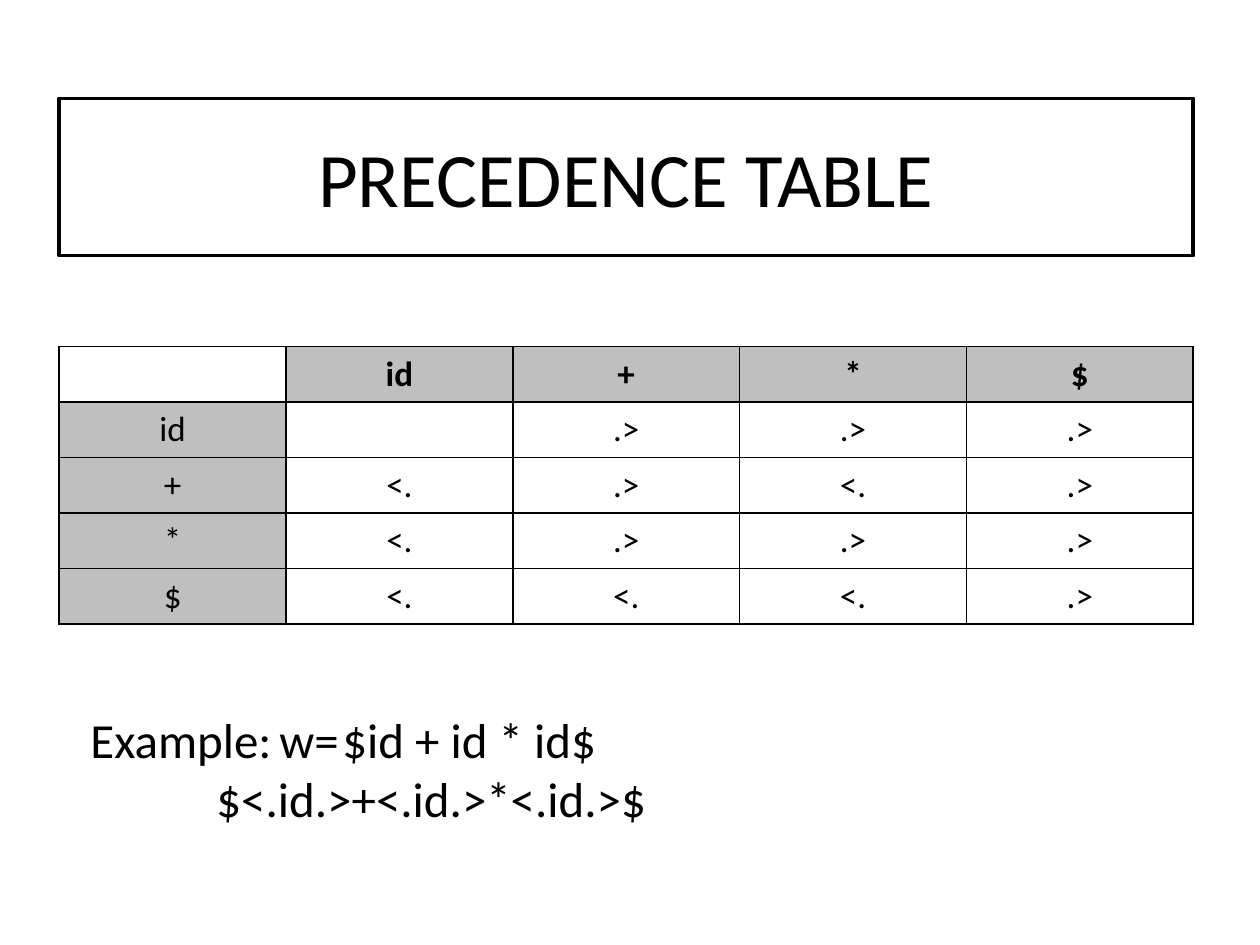
import pptx
import pptx.dml.color
import pptx.enum.text
import pptx.oxml
import pptx.oxml.ns
import pptx.util
from dataclasses import dataclass

Inches, Pt = pptx.util.Inches, pptx.util.Pt
MIDDLE = pptx.enum.text.MSO_ANCHOR.MIDDLE
CENTER = pptx.enum.text.PP_ALIGN.CENTER


@dataclass(frozen=True)
class Theme:
    font: str = "Calibri"
    ink: str = "000000"
    paper: str = "FFFFFF"
    header: str = "BFBFBF"
    title_size: int = 44
    table_size: int = 20
    example_size: int = 28
    frame_width: int = 2
    border_width: int = 1


THEME = Theme()

SYMBOLS = ["id", "+", "*", "$"]
RELATIONS = [
    ["", ".>", ".>", ".>"],
    ["<.", ".>", "<.", ".>"],
    ["<.", ".>", ".>", ".>"],
    ["<.", "<.", "<.", ".>"],
]
EXAMPLE = ["Example:\tw=\t$id + id * id$", "\t\t$<.id.>+<.id.>*<.id.>$"]


def rgb(value):
    return pptx.dml.color.RGBColor.from_string(value)


def fill_solid(target, color):
    target.fill.solid()
    target.fill.fore_color.rgb = rgb(color)


def write(para, text, size, bold=False, align=None):
    para.alignment = align
    span = para.add_run()
    span.text = text
    formats = {"name": THEME.font, "size": Pt(size), "bold": bold}
    for name, value in formats.items():
        setattr(span.font, name, value)
    span.font.color.rgb = rgb(THEME.ink)


def add_borders(cell):
    props = cell._tc.get_or_add_tcPr()
    for index, side in enumerate(("lnL", "lnR", "lnT", "lnB")):
        line = pptx.oxml.parse_xml(
            f'<a:{side} {pptx.oxml.ns.nsdecls("a")} w="{Pt(THEME.border_width)}">'
            f'<a:solidFill><a:srgbClr val="{THEME.ink}"/></a:solidFill></a:{side}>')
        props.insert(index, line)  # borders come before the fill


def place_title(page, box):
    title = page.shapes.title
    for name, value in zip(("left", "top", "width", "height"), box):
        setattr(title, name, value)
    fill_solid(title, THEME.paper)
    title.line.color.rgb = rgb(THEME.ink)
    title.line.width = Pt(THEME.frame_width)
    title.text_frame.vertical_anchor = MIDDLE
    write(title.text_frame.paragraphs[0], "PRECEDENCE TABLE",
          THEME.title_size, align=CENTER)


def place_table(page, box):
    rows = [["", *SYMBOLS]]
    rows += [[symbol, *row] for symbol, row in zip(SYMBOLS, RELATIONS)]
    table = page.shapes.add_table(len(rows), len(rows[0]), *box).table
    for r, row in enumerate(rows):
        for c, text in enumerate(row):
            cell = table.cell(r, c)
            is_header = (r == 0) != (c == 0)  # the corner stays white
            fill_solid(cell, THEME.header if is_header else THEME.paper)
            add_borders(cell)
            para = cell.text_frame.paragraphs[0]
            if text:
                write(para, text, THEME.table_size, bold=r == 0, align=CENTER)


def place_example(page, box):
    frame = page.shapes.add_textbox(*box).text_frame
    frame.word_wrap = True
    frame.vertical_anchor = MIDDLE
    for index, text in enumerate(EXAMPLE):
        para = frame.add_paragraph() if index else frame.paragraphs[0]
        write(para, text, THEME.example_size)


def main():
    deck = pptx.Presentation()
    deck.slide_width, deck.slide_height = Inches(10), Inches(7.5)
    page = deck.slides.add_slide(deck.slide_layouts[5])
    fill_solid(page.background, THEME.paper)

    # Three stacked regions of equal width
    left, width = Inches(0.47), int(deck.slide_width * 0.9)
    band = deck.slide_height // 6
    place_title(page, (left, Inches(0.78), width, band))
    place_table(page, (left, Inches(2.75), width, Inches(2.2)))
    place_example(page, (Inches(0.62), Inches(5.47), width, band))

    deck.save("out.pptx")


if __name__ == "__main__":
    main()
